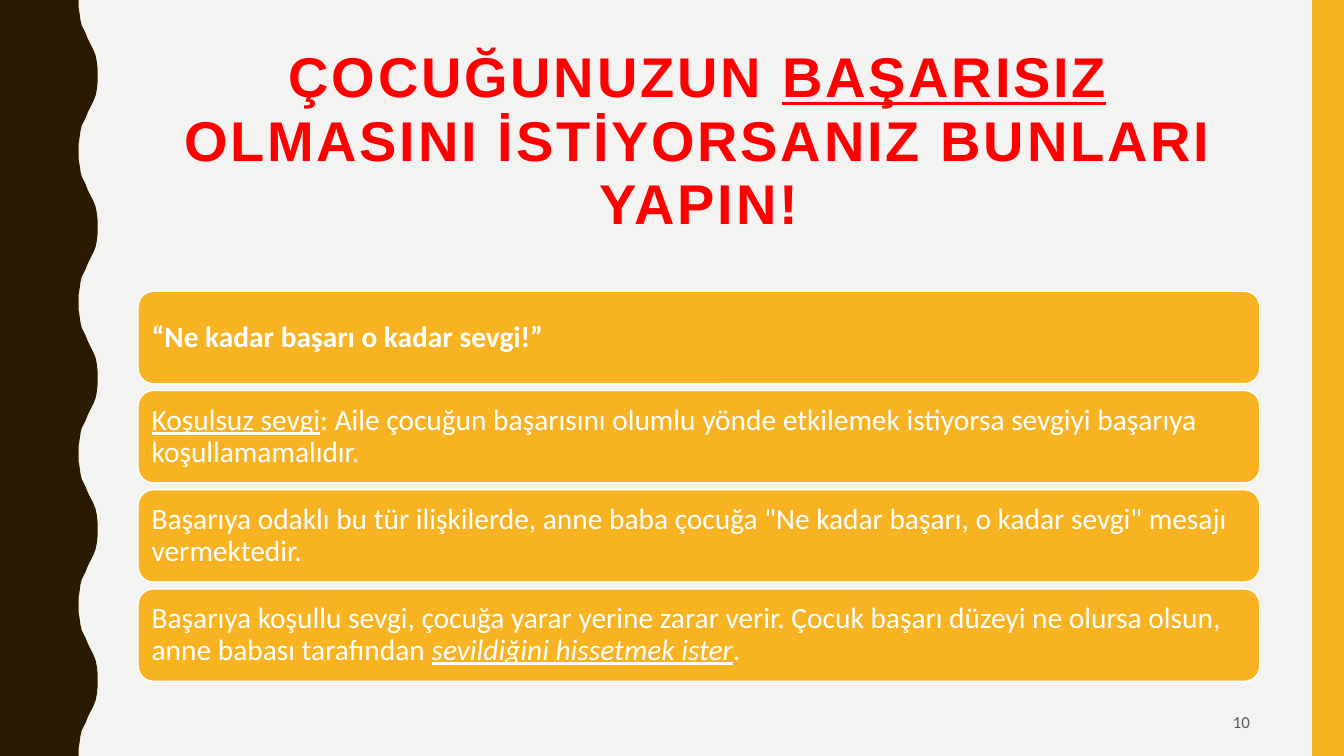
from dataclasses import dataclass

from pptx import Presentation
from pptx.dml.color import RGBColor
from pptx.enum.shapes import MSO_SHAPE
from pptx.enum.text import MSO_ANCHOR, PP_ALIGN
from pptx.util import Cm, Pt

RECT = MSO_SHAPE.RECTANGLE
ROUND = MSO_SHAPE.ROUNDED_RECTANGLE
TOP, MIDDLE = MSO_ANCHOR.TOP, MSO_ANCHOR.MIDDLE
LEFT, CENTER, RIGHT = PP_ALIGN.LEFT, PP_ALIGN.CENTER, PP_ALIGN.RIGHT


@dataclass(frozen=True)
class Theme:
    paper: str = "F3F3F2"
    brown: str = "2A1A00"
    gold: str = "F8B323"
    red: str = "FF0000"
    white: str = "FFFFFF"
    gray: str = "595959"
    head: str = "Arial"
    body: str = "Calibri"
    title: int = 40
    card: int = 21
    note: int = 12


THEME = Theme()
WIDTH, HEIGHT = 33.87, 19.05
EDGE, SPAN = 3.48, 28.27
CARD_TOP, CARD_STEP, CARD_HIGH = 7.34, 2.5, 2.33

# Half a wave of the left band: (x, y) in cm
PERIOD = 3.81
HALF = [(1.98, 0), (1.98, 0.18), (2.01, 0.36), (2.03, 0.51), (2.06, 0.64),
        (2.11, 0.74), (2.16, 0.84), (2.21, 0.97), (2.26, 1.07), (2.31, 1.17),
        (2.36, 1.27), (2.41, 1.4), (2.44, 1.55), (2.46, 1.73), (2.46, 1.9)]

# Each run is its text and its marks: b bold, i italic, u underlined
TITLE = [("ÇOCUĞUNUZUN ", "b"), ("BAŞARISIZ", "bu"),
         (" OLMASINI İSTİYORSANIZ BUNLARI YAPIN!", "b")]
CARDS = [
    [("“Ne kadar başarı o kadar sevgi!”", "b")],
    [("Koşulsuz sevgi", "u"),
     (": Aile çocuğun başarısını olumlu yönde etkilemek istiyorsa "
      "sevgiyi başarıya koşullamamalıdır.", "")],
    [("Başarıya odaklı bu tür ilişkilerde, anne baba çocuğa "
      "\"Ne kadar başarı, o kadar sevgi\" mesajı vermektedir.", "")],
    [("Başarıya koşullu sevgi, çocuğa yarar yerine zarar verir. Çocuk başarı "
      "düzeyi ne olursa olsun, anne babası tarafından ", ""),
     ("sevildiğini hissetmek ister", "iu"), (".", "")],
]


def paint(shape, color, line=None):
    shape.shadow.inherit = False
    shape.fill.solid()
    shape.fill.fore_color.rgb = RGBColor.from_string(color)
    if line:
        shape.line.color.rgb = RGBColor.from_string(line)
        shape.line.width = Pt(1)
    else:
        shape.line.fill.background()


def write(shape, runs, font, size, color, align=LEFT, anchor=MIDDLE,
          lines=0.9, track=0):
    """Fill a shape with one paragraph of marked runs."""
    frame = shape.text_frame
    frame.word_wrap = True
    frame.vertical_anchor = anchor
    para = frame.paragraphs[0]
    para.alignment = align
    para.line_spacing = lines
    para.font.name = font
    para.font.size = Pt(size)
    para.font.color.rgb = RGBColor.from_string(color)
    for text, marks in runs:
        run = para.add_run()
        run.text = text
        run.font.bold = "b" in marks
        run.font.italic = "i" in marks
        run.font.underline = "u" in marks
        if track:
            run.font._element.set("spc", str(track))
    return frame


def add_box(slide, left, top, width, height):
    return slide.shapes.add_textbox(Cm(left), Cm(top), Cm(width), Cm(height))


def add_wave(slide):
    wave = HALF + [(x, PERIOD - y) for x, y in reversed(HALF)]
    edge = [(x, y + PERIOD * turn) for turn in range(5) for x, y in wave]
    points = [(Cm(x), Cm(y)) for x, y in edge + [(0, HEIGHT)]]
    pen = slide.shapes.build_freeform(0, 0)
    pen.add_line_segments(points, close=True)
    paint(pen.convert_to_shape(), THEME.brown)


def add_bar(slide):
    bar = slide.shapes.add_shape(RECT, Cm(33.07), 0, Cm(0.8), Cm(HEIGHT))
    paint(bar, THEME.gold)


def add_card(slide, top, runs):
    card = slide.shapes.add_shape(ROUND, Cm(EDGE), Cm(top), Cm(SPAN), Cm(CARD_HIGH))
    paint(card, THEME.gold, THEME.white)
    frame = write(card, runs, THEME.body, THEME.card, THEME.white)
    frame.margin_left = frame.margin_right = Cm(0.23)
    frame.margin_top = frame.margin_bottom = Cm(0.23)


def main():
    deck = Presentation()
    deck.slide_width, deck.slide_height = Cm(WIDTH), Cm(HEIGHT)
    slide = deck.slides.add_slide(deck.slide_layouts[6])
    back = slide.background.fill
    back.solid()
    back.fore_color.rgb = RGBColor.from_string(THEME.paper)

    add_wave(slide)
    add_bar(slide)
    write(add_box(slide, EDGE, 1.07, SPAN, 4.14), TITLE, THEME.head,
          THEME.title, THEME.red, CENTER, TOP, lines=0.94, track=200)
    for row, runs in enumerate(CARDS):
        add_card(slide, CARD_TOP + row * CARD_STEP, runs)
    write(add_box(slide, 23.93, 17.7, 7.82, 0.97), [("10", "")], THEME.body,
          THEME.note, THEME.gray, RIGHT, lines=1.0)
    deck.save("out.pptx")


if __name__ == "__main__":
    main()
